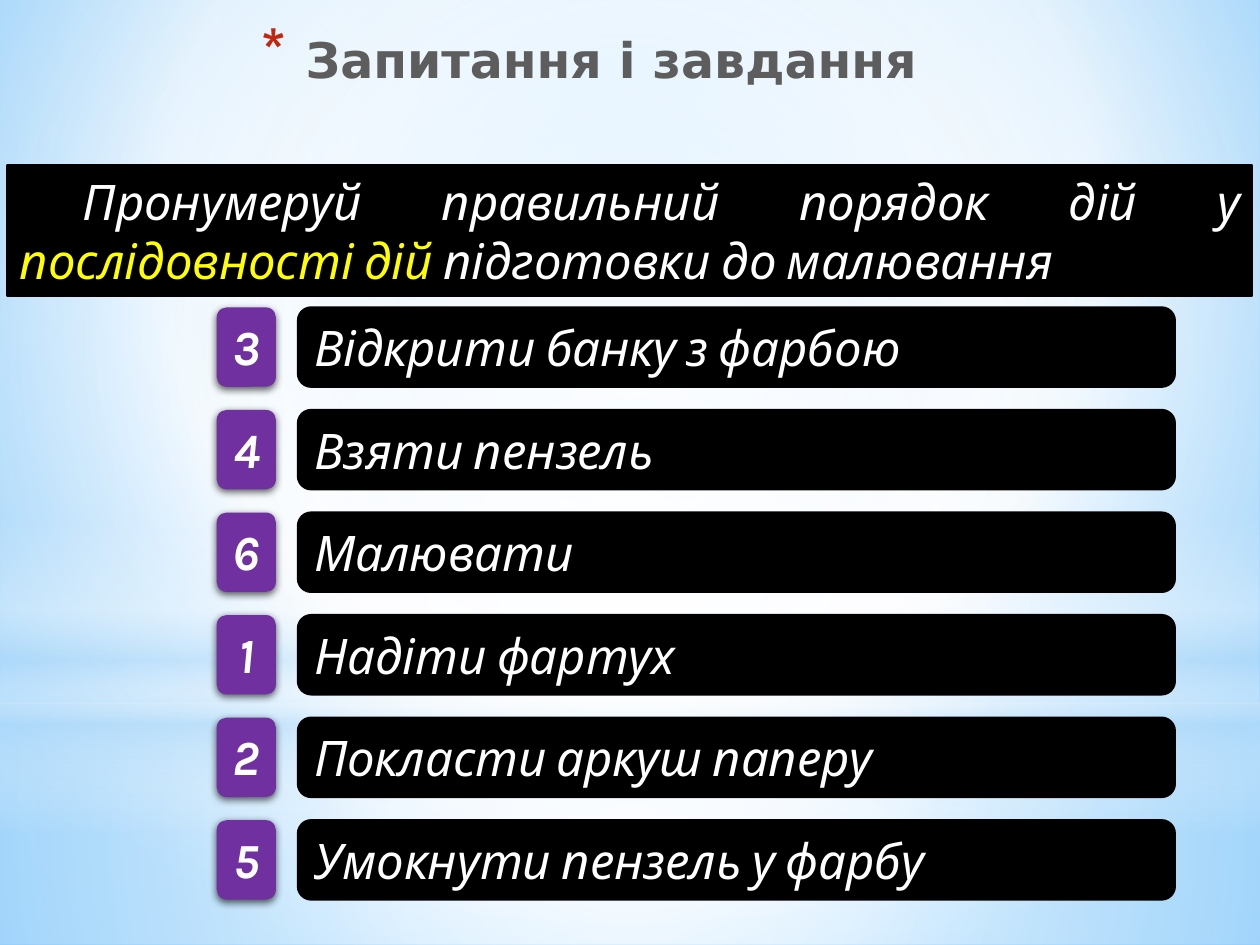
from lxml import etree
from pptx import Presentation
from pptx.dml.color import RGBColor as RGB
from pptx.enum.shapes import MSO_SHAPE as Kind
from pptx.enum.text import MSO_ANCHOR as Anchor, MSO_AUTO_SIZE as Fit, PP_ALIGN as Align
from pptx.oxml import parse_xml
from pptx.oxml.ns import nsdecls, qn
from pptx.util import Inches, Pt

BLACK, WHITE = RGB(0, 0, 0), RGB(255, 255, 255)
GREY, YELLOW = RGB(0x5D, 0x5D, 0x5D), RGB(255, 255, 0)
PURPLE = RGB(0x70, 0x30, 0xA0)
PALE, RED = "B4DCFA", "C3260C"
FONT, SIZE = "Karla", 28

# Content
TITLE = "Запитання і завдання"
TASK = [("Пронумеруй правильний порядок дій у ", WHITE),
        ("послідовності дій", YELLOW),
        (" підготовки до малювання", WHITE)]
STEPS = [(3, "Відкрити банку з фарбою"), (4, "Взяти пензель"),
         (6, "Малювати"), (1, "Надіти фартух"),
         (2, "Покласти аркуш паперу"), (5, "Умокнути пензель у фарбу")]

# Backdrop: kind, box, stops (position, colour, opacity), focus or None if linear
MID = (50, 50, 50, 50)
SKY = [(0, "9ED5FF", 100), (60, "FFFFFF", 100), (100, "5BB9FF", 100)]
GLOWS = [
    (Kind.RECTANGLE, (0, 5.58, 10, 1.92),
     [(0, "FFFFFF", 91), (37, "FFFFFF", 76), (100, PALE, 79)], MID),
    (Kind.RECTANGLE, (0, 0, 10, 5.58),
     [(0, "FFFFFF", 89), (48, "FFFFFF", 62), (100, PALE, 79)], MID),
    (Kind.RECTANGLE, (0, 4.12, 10, 2.5),
     [(0, "FFFFFF", 0), (29, "FFFFFF", 30), (45, PALE, 40),
      (55, "FFFFFF", 26), (65, PALE, 60), (100, "FFFFFF", 0)], None),
    (Kind.OVAL, (0, 1.75, 10, 5.58),
     [(0, "FFFFFF", 100), (56, "FFFFFF", 0)], MID),
]

# Grid of the answer rows
TOP, PITCH, HIGH = 2.44, 0.814, 0.63
NUM_X, NUM_W, BAR_X, BAR_W = 1.72, 0.47, 2.365, 6.96


def grad(stops, focus):
    """Gradient fill, round a focus or straight down."""
    marks = "".join(
        f'<a:gs pos="{pos * 1000}"><a:srgbClr val="{tint}">'
        f'<a:alpha val="{show * 1000}"/></a:srgbClr></a:gs>'
        for pos, tint, show in stops)
    if focus:
        l, t, r, b = (n * 1000 for n in focus)
        way = (f'<a:path path="circle"><a:fillToRect l="{l}" t="{t}" '
               f'r="{r}" b="{b}"/></a:path>')
    else:
        way = '<a:lin ang="5400000" scaled="0"/>'
    return parse_xml(f'<a:gradFill {nsdecls("a")} rotWithShape="1">'
                     f'<a:gsLst>{marks}</a:gsLst>{way}</a:gradFill>')


def swap(props, new):
    old = props.find(qn("a:solidFill"))
    props.replace(old, new)


def shape(kind, box, fill, line=None):
    item = slide.shapes.add_shape(kind, *map(Inches, box))
    item.shadow.inherit = False
    item.fill.solid()
    item.fill.fore_color.rgb = fill
    if line is None:
        item.line.fill.background()
    else:
        item.line.color.rgb = line
        item.line.width = Pt(1.25)
    return item


def write(item, runs, align, bold=False, slant=True, font=FONT):
    para = item.text_frame.paragraphs[0]
    para.alignment = align
    for text, tint in runs:
        run = para.add_run()
        run.text = text
        face = run.font
        face.name, face.size = font, Pt(SIZE)
        face.bold, face.italic = bold, slant
        face.color.rgb = tint
    return para.paragraph_format if hasattr(para, "paragraph_format") else para


def label(kind, box, fill, runs, align, line=None, bold=False):
    item = shape(kind, box, fill, line)
    frame = item.text_frame
    frame.word_wrap = True
    frame.vertical_anchor = Anchor.TOP
    frame.auto_size = Fit.SHAPE_TO_FIT_TEXT
    return item, write(item, runs, align, bold)


deck = Presentation()
deck.slide_width, deck.slide_height = Inches(10), Inches(7.5)
slide = deck.slides.add_slide(deck.slide_layouts[5])

# Background and soft glows
slide.background.fill.solid()
swap(slide.element.find(".//" + qn("p:bgPr")), grad(SKY, (20, 10, 20, 60)))
for kind, box, stops, focus in GLOWS:
    glow = shape(kind, box, WHITE)
    swap(glow.element.spPr, grad(stops, focus))

# Title with a red star bullet, in front of the glows
title = slide.shapes.title
title.left, title.top, title.width, title.height = map(
    Inches, (0.96, 0.18, 7.43, 0.58))
slide.shapes.element.append(title.element)
title.text_frame.vertical_anchor = Anchor.MIDDLE
title.text_frame.word_wrap = True
title.text_frame.auto_size = Fit.NONE
para = write(title, [(TITLE, GREY)], Align.CENTER, True, False, "DejaVu Sans")
props = para._p.get_or_add_pPr()
props.set("marL", str(Inches(0.35)))
props.set("indent", str(Inches(-0.35)))
tint = etree.SubElement(props, qn("a:buClr"))
etree.SubElement(tint, qn("a:srgbClr"), val=RED)
etree.SubElement(props, qn("a:buSzPct"), val="128000")
etree.SubElement(props, qn("a:buChar"), char="*")

# Task banner
banner, para = label(Kind.RECTANGLE, (0.06, 1.31, 9.88, 1.04), BLACK,
                     TASK, Align.JUSTIFY, BLACK)
para._p.get_or_add_pPr().set("indent", str(Inches(0.5)))

# Steps with their numbers
for row, (num, step) in enumerate(STEPS):
    y = TOP + row * PITCH
    label(Kind.ROUNDED_RECTANGLE, (BAR_X, y, BAR_W, HIGH), BLACK,
          [(step, WHITE)], Align.JUSTIFY, BLACK)
    badge, para = label(Kind.ROUNDED_RECTANGLE, (NUM_X, y, NUM_W, HIGH), PURPLE,
                        [(str(num), WHITE)], Align.CENTER, bold=True)
    effect = badge.element.spPr.find(qn("a:effectLst"))
    effect.append(parse_xml(
        f'<a:outerShdw {nsdecls("a")} blurRad="{Pt(4.5)}" dist="{Pt(1.5)}" '
        'dir="5400000" rotWithShape="0"><a:srgbClr val="000000">'
        '<a:alpha val="63000"/></a:srgbClr></a:outerShdw>'))

deck.save("out.pptx")
